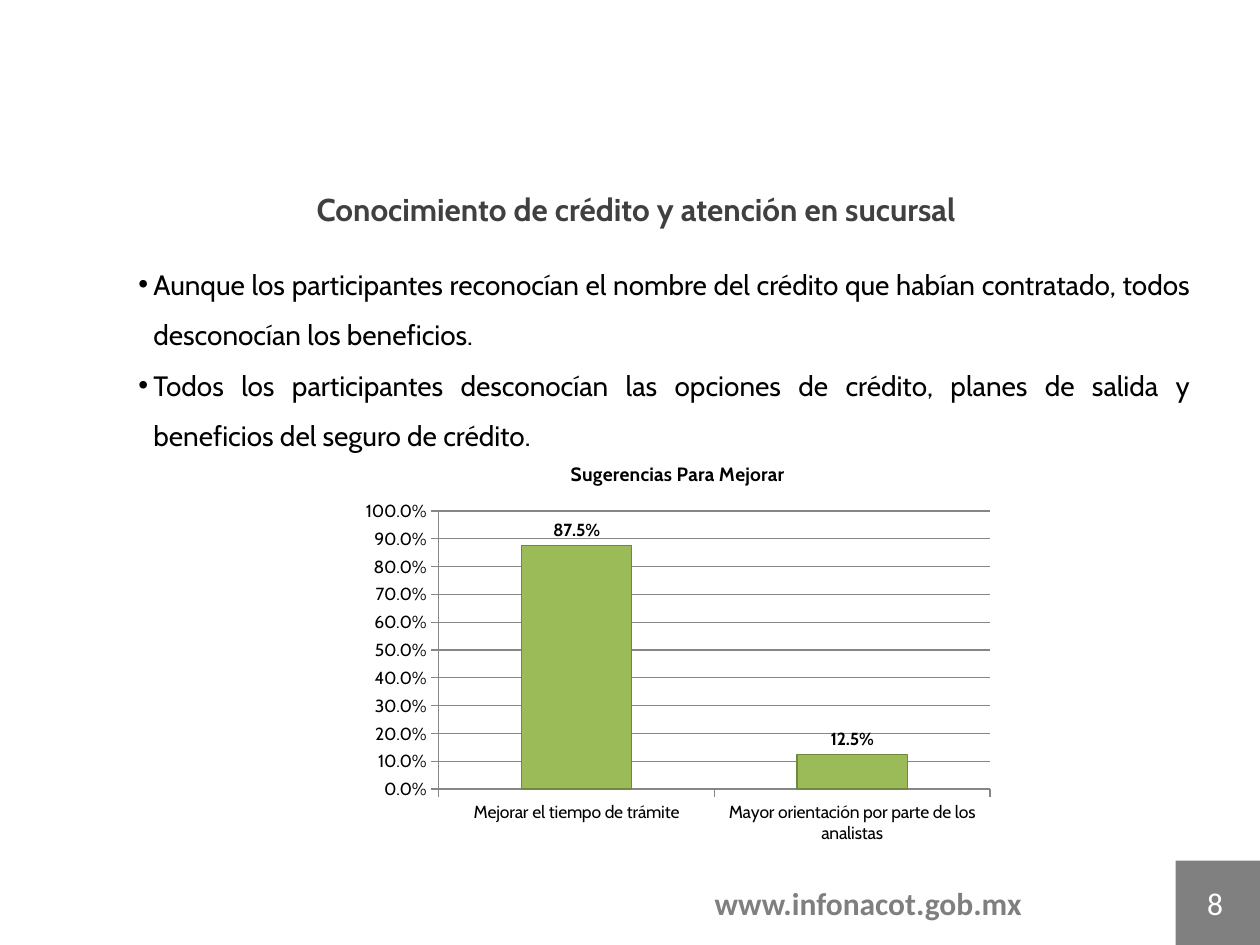
from lxml import etree
from pptx import Presentation
from pptx.chart.data import CategoryChartData
from pptx.dml.color import RGBColor
from pptx.enum.chart import XL_CHART_TYPE as ChartType, XL_LABEL_POSITION as LabelPosition
from pptx.enum.chart import XL_TICK_MARK as TickMark
from pptx.enum.shapes import MSO_SHAPE as Shape
from pptx.enum.text import MSO_ANCHOR as Anchor, PP_ALIGN as Align
from pptx.oxml.ns import qn
from pptx.util import Inches, Pt


def color(value):
    return RGBColor.from_string(value)


def add_text(place, lines, size, font, ink, align, bold=False, bullet=False):
    box = slide.shapes.add_textbox(*[Inches(length) for length in place])
    frame = box.text_frame
    frame.word_wrap = True
    for index, line in enumerate(lines):
        para = frame.paragraphs[0] if index == 0 else frame.add_paragraph()
        para.alignment = align
        if bullet:
            para.line_spacing = 1.5
            props = para._p.get_or_add_pPr()
            props.set("marL", str(Inches(0.31)))
            props.set("indent", str(Inches(-0.12)))
            etree.SubElement(props, qn("a:buFont")).set("typeface", "Arial")
            etree.SubElement(props, qn("a:buChar")).set("char", "•")
        span = para.add_run()
        span.text = line
        span.font.size = Pt(size)
        span.font.name = font
        span.font.bold = bold
        span.font.color.rgb = color(ink)
    return box


deck = Presentation()
deck.slide_width, deck.slide_height = Inches(10), Inches(7.5)
slide = deck.slides.add_slide(deck.slide_layouts[6])

# Footer: web address and page number
add_text((4.45, 6.97, 4.88, 0.4), ["www.infonacot.gob.mx"], 18, "Calibri", "7F7F7F",
         Align.CENTER, bold=True)
square = slide.shapes.add_shape(Shape.RECTANGLE, Inches(9.33), Inches(6.83),
                                Inches(0.67), Inches(0.67))
square.shadow.inherit = False
square.fill.solid()
square.fill.fore_color.rgb = color("808080")
square.line.fill.background()
number = add_text((9.33, 6.83, 0.63, 0.67), ["8"], 18, "Calibri", "FFFFFF", Align.CENTER)
number.text_frame.vertical_anchor = Anchor.MIDDLE

# Heading and findings
add_text((1.82, 1.46, 6.46, 0.4), ["Conocimiento de crédito y atención en sucursal"],
         18, "Cabin", "404040", Align.CENTER, bold=True)
findings = [
    "Aunque los participantes reconocían el nombre del crédito que habían contratado, "
    "todos desconocían los beneficios.",
    "Todos los participantes desconocían las opciones de crédito, planes de salida y "
    "beneficios del seguro de crédito.",
]
add_text((0.81, 1.94, 8.74, 1.72), findings, 16, "Cabin", "000000", Align.JUSTIFY, bullet=True)

# Suggestions chart
title = "Sugerencias Para Mejorar"
data = CategoryChartData(number_format="0.0%")
data.categories = ["Mejorar el tiempo de trámite", "Mayor orientación por parte de los analistas"]
data.add_series(title, [0.875, 0.125])
chart = slide.shapes.add_chart(ChartType.COLUMN_CLUSTERED, Inches(2.8), Inches(3.51),
                               Inches(5.16), Inches(3.25), data).chart
chart.font.size = Pt(10)
chart.font.name = "Cabin"
chart.font.color.rgb = color("000000")
chart.has_legend = False
chart.has_title = True
span = chart.chart_title.text_frame.paragraphs[0].add_run()
span.text = title
span.font.size = Pt(11)
span.font.bold = True
span.font.name = "Cabin"
span.font.color.rgb = color("000000")

# Axes and gridlines
values = chart.value_axis
values.minimum_scale, values.maximum_scale, values.major_unit = 0, 1, 0.1
values.tick_labels.number_format = "0.0%"
values.tick_labels.number_format_is_linked = False
values.has_major_gridlines = True
for axis in (values, chart.category_axis):
    axis.major_tick_mark = TickMark.OUTSIDE
    axis.minor_tick_mark = TickMark.NONE
for line in (values.format.line, chart.category_axis.format.line, values.major_gridlines.format.line):
    line.color.rgb = color("868686")
    line.width = Pt(0.75)

# Columns and their labels
plot = chart.plots[0]
plot.gap_width = 150
plot.vary_by_categories = False
series = plot.series[0]
series.format.fill.solid()
series.format.fill.fore_color.rgb = color("9BBB59")
series.format.line.color.rgb = color("71893F")
series.format.line.width = Pt(0.75)
labels = series.data_labels
labels.show_value = True
labels.number_format = "0.0%"
labels.number_format_is_linked = False
labels.position = LabelPosition.OUTSIDE_END
labels.font.bold = True
labels.font.size = Pt(10)
labels.font.name = "Cabin"
labels.font.color.rgb = color("000000")

deck.save("out.pptx")
